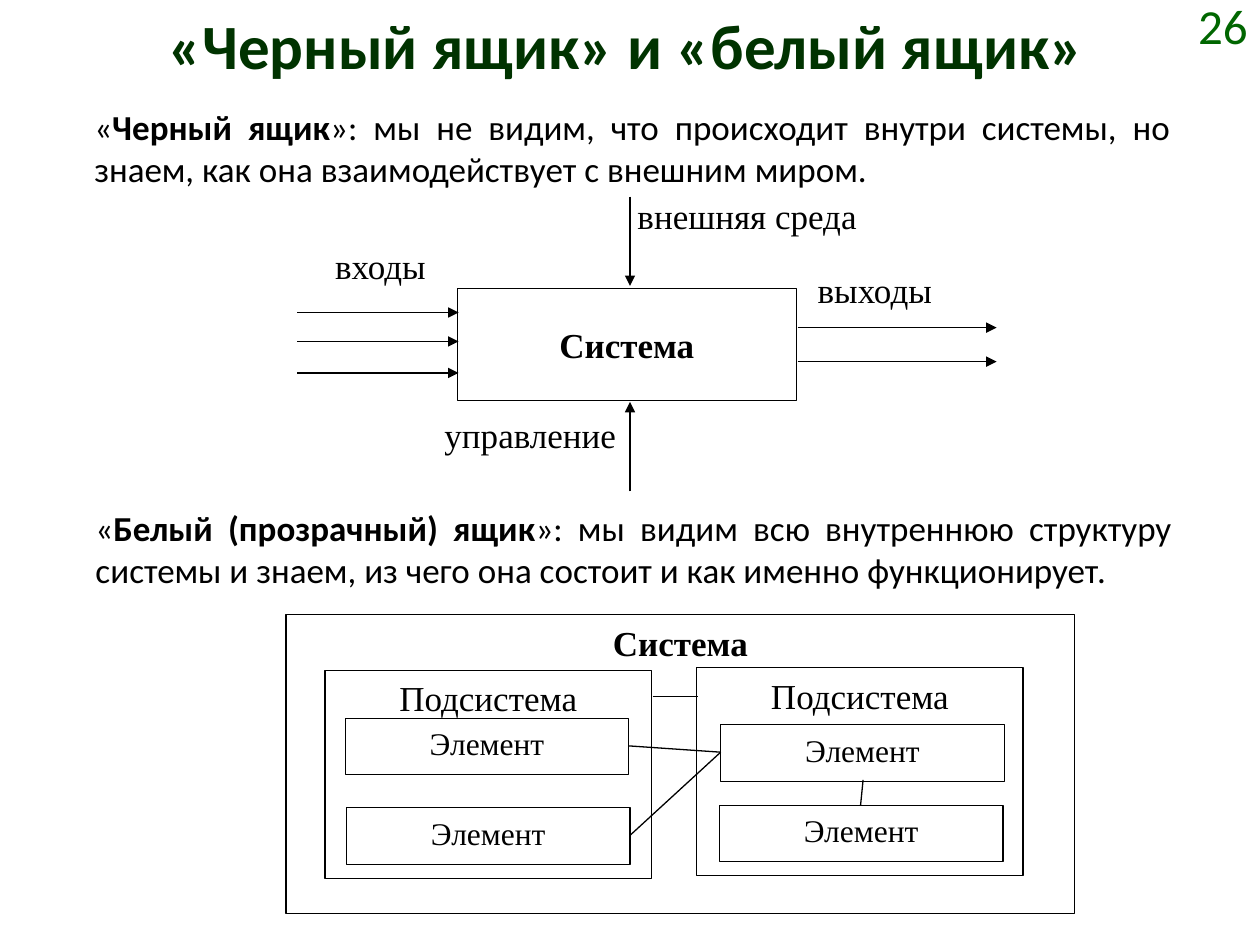
from lxml import etree
from pptx import Presentation
from pptx.dml.color import RGBColor
from pptx.enum.shapes import MSO_CONNECTOR as Connector, MSO_SHAPE as Shape
from pptx.enum.text import MSO_ANCHOR as Anchor, MSO_AUTO_SIZE as AutoSize, PP_ALIGN as Align
from pptx.oxml.ns import qn
from pptx.util import Inches, Pt

COLORS = {"ink": "000000", "paper": "FFFFFF", "title": "003300", "number": "006600"}
SANS, SERIF = "Calibri", "Times New Roman"


def color(name):
    return RGBColor.from_string(COLORS[name])


def write(frame, runs, size, font=SERIF, ink="ink", bold=False, align=Align.CENTER):
    """Fill the first paragraph; runs are (text, bold) pairs or one string."""
    frame.word_wrap = True
    paragraph = frame.paragraphs[0]
    paragraph.alignment = align
    paragraph.font.size = Pt(size)
    paragraph.font.name = font
    paragraph.font.color.rgb = color(ink)
    if isinstance(runs, str):
        runs = [(runs, bold)]
    for text, is_bold in runs:
        run = paragraph.add_run()
        run.text = text
        run.font.bold = is_bold
    return paragraph


def add_text(slide, box, runs, size, anchor=Anchor.TOP, **style):
    frame = slide.shapes.add_textbox(*map(Inches, box)).text_frame
    frame.vertical_anchor = anchor
    return frame, write(frame, runs, size, **style)


def add_label(slide, box, text, align):
    frame, _ = add_text(slide, box, text, 20, align=align)
    frame.margin_left = frame.margin_right = frame.margin_top = frame.margin_bottom = 0


def add_definition(slide, left, top, term, meaning):
    runs = [("«", False), (term, True), ("»: " + meaning, False)]
    frame, paragraph = add_text(slide, (left, top, 8.74, 0.77), runs, 20,
                                font=SANS, align=Align.JUSTIFY)
    frame.auto_size = AutoSize.SHAPE_TO_FIT_TEXT
    paragraph.space_before = Pt(12)


def add_block(slide, box, text, size=20, bold=False, anchor=Anchor.TOP):
    block = slide.shapes.add_shape(Shape.RECTANGLE, *map(Inches, box))
    block.shadow.inherit = False
    block.fill.solid()
    block.fill.fore_color.rgb = color("paper")
    block.line.color.rgb = color("ink")
    block.line.width = Pt(0.75)
    block.text_frame.vertical_anchor = anchor
    write(block.text_frame, text, size, bold=bold)


def add_link(slide, start, end, arrow=False):
    link = slide.shapes.add_connector(Connector.STRAIGHT, *map(Inches, start + end))
    link.line.color.rgb = color("ink")
    link.line.width = Pt(0.75)
    if arrow:
        etree.SubElement(link.line._get_or_add_ln(), qn("a:tailEnd"), type="triangle")
    etree.SubElement(link._element.spPr, qn("a:effectLst"))


def add_black_box(slide):
    add_block(slide, (3.63, 2.29, 2.69, 0.89), "Система", bold=True, anchor=Anchor.MIDDLE)
    # Inputs, outputs, environment and control
    arrows = [((2.36, y), (3.64, y)) for y in (2.48, 2.71, 2.96)]
    arrows += [((6.33, y), (7.91, y)) for y in (2.6, 2.87)]
    arrows += [((5, 1.56), (5, 2.27)), ((5, 3.9), (5, 3.19))]
    for start, end in arrows:
        add_link(slide, start, end, arrow=True)
    add_label(slide, (2.35, 1.94, 1.34, 0.58), "входы", Align.CENTER)
    add_label(slide, (6.49, 2.13, 1.34, 0.58), "выходы", Align.LEFT)
    add_label(slide, (5.06, 1.54, 2.34, 0.58), "внешняя среда", Align.LEFT)
    add_label(slide, (2.65, 3.28, 2.24, 0.58), "управление", Align.RIGHT)


def add_white_box(slide):
    add_block(slide, (2.27, 4.88, 6.26, 2.37), "Система", bold=True)
    for left, top in ((2.58, 5.32), (5.53, 5.3)):
        add_block(slide, (left, top, 2.59, 1.65), "Подсистема")
    for left, top in ((2.74, 5.7), (2.75, 6.41), (5.72, 5.75), (5.71, 6.39)):
        add_block(slide, (left, top, 2.25, 0.45), "Элемент", size=18)
    # Links between the parts
    hub = (5.72, 5.97)
    for start, end in (((5, 6.63), hub), ((4.99, 5.92), hub),
                       ((5.18, 5.53), (5.54, 5.53)), ((6.85, 6.19), (6.83, 6.39))):
        add_link(slide, start, end)


def main():
    deck = Presentation()
    deck.slide_width, deck.slide_height = Inches(10), Inches(7.5)
    slide = deck.slides.add_slide(deck.slide_layouts[6])

    # Heading and page number
    add_text(slide, (0.47, 0, 9, 0.94), "«Черный ящик» и «белый ящик»", 36,
             font=SANS, ink="title", bold=True)
    add_text(slide, (8.98, 0, 1.02, 0.39), "26", 28, anchor=Anchor.MIDDLE,
             font=SANS, ink="number", align=Align.RIGHT)

    # Black box
    add_black_box(slide)
    add_definition(slide, 0.65, 0.79, "Черный ящик",
                   "мы не видим, что происходит внутри системы, но знаем, "
                   "как она взаимодействует с внешним миром.")

    # White box
    add_definition(slide, 0.66, 3.97, "Белый (прозрачный) ящик",
                   "мы видим всю внутреннюю структуру системы и знаем, "
                   "из чего она состоит и как именно функционирует.")
    add_white_box(slide)

    deck.save("out.pptx")


if __name__ == "__main__":
    main()
